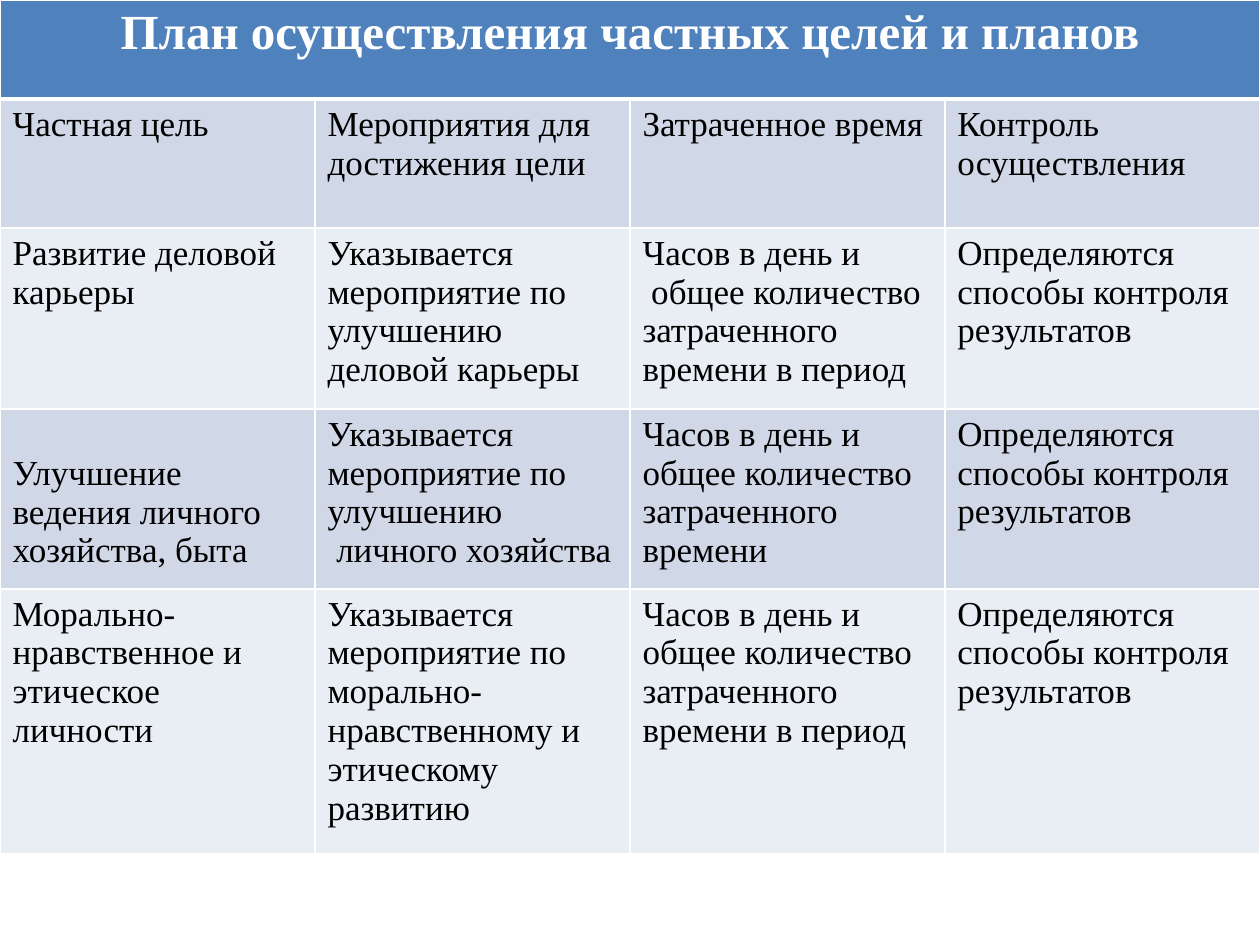
import pptx
import pptx.dml.color
import pptx.enum.text
import pptx.util
import lxml.etree
from pptx.oxml.ns import qn

EMU_PER_PX = 914400 // 126
FONT = "Times New Roman"
WHITE = "FFFFFF"
BLACK = "000000"
HEADER_FILL = "4F81BD"
BAND_FILLS = ["D0D8E8", "E9EDF4"]
COLUMN_WIDTH = 315
ROW_HEIGHTS = [99, 129, 181, 180, 265]
TOP_MARGIN = 6
LINE_HEIGHT = 39
TITLE = "План осуществления частных целей и планов"
CONTROL = "Определяются способы контроля результатов"
ROWS = [
    ["Частная цель", "Мероприятия для достижения цели", "Затраченное время",
     "Контроль\nосуществления"],
    ["Развитие деловой карьеры",
     "Указывается мероприятие по улучшению деловой карьеры",
     "Часов в день и\n общее количество затраченного времени в период", CONTROL],
    ["Улучшение ведения личного хозяйства, быта",
     "Указывается мероприятие по улучшению\n личного хозяйства",
     "Часов в день и\nобщее количество затраченного времени", CONTROL],
    ["Морально-нравственное и этическое личности",
     "Указывается мероприятие по морально-\nнравственному и этическому развитию",
     "Часов в день и\nобщее количество затраченного времени в период", CONTROL],
]


def px(length):
    return pptx.util.Emu(length * EMU_PER_PX)


def color(value):
    return pptx.dml.color.RGBColor.from_string(value)


def set_borders(cell, top, bottom):
    properties = cell._tc.get_or_add_tcPr()
    for side, width in (("L", 1), ("R", 1), ("T", top), ("B", bottom)):
        line = lxml.etree.SubElement(properties, qn(f"a:ln{side}"), w=str(pptx.util.Pt(width)))
        fill = lxml.etree.SubElement(line, qn("a:solidFill"))
        lxml.etree.SubElement(fill, qn("a:srgbClr"), val=WHITE)


def style_cell(cell, fill, top=1, bottom=1):
    set_borders(cell, top, bottom)
    cell.fill.solid()
    cell.fill.fore_color.rgb = color(fill)
    cell.margin_top = px(TOP_MARGIN)


def write_text(cell, text, size, text_color, bold=False, alignment=None):
    cell.text_frame.text = text
    for paragraph in cell.text_frame.paragraphs:
        paragraph.alignment = alignment
        for run in paragraph.runs:
            run.font.name = FONT
            run.font.size = pptx.util.Pt(size)
            run.font.bold = bold
            run.font.color.rgb = color(text_color)


def add_plan_table(slide):
    row_count, column_count = len(ROW_HEIGHTS), len(ROWS[0])
    frame = slide.shapes.add_table(row_count, column_count, 0, 0,
                                   px(COLUMN_WIDTH * column_count), px(sum(ROW_HEIGHTS)))
    table = frame.table
    for column in table.columns:
        column.width = px(COLUMN_WIDTH)
    for row, height in zip(table.rows, ROW_HEIGHTS):
        row.height = px(height)
    return table


def fill_header(table):
    for cell in table.rows[0].cells:
        style_cell(cell, HEADER_FILL, bottom=3)
    header = table.cell(0, 0)
    header.merge(table.cell(0, len(table.columns) - 1))
    write_text(header, TITLE, 28, WHITE, True, pptx.enum.text.PP_ALIGN.CENTER)


def fill_body(table):
    for row_index, texts in enumerate(ROWS):
        for column_index, text in enumerate(texts):
            cell = table.cell(row_index + 1, column_index)
            style_cell(cell, BAND_FILLS[row_index % 2], top=1 if row_index else 3)
            write_text(cell, text, 20, BLACK)
    table.cell(3, 0).margin_top = px(TOP_MARGIN + LINE_HEIGHT)


def main():
    presentation = pptx.Presentation()
    presentation.slide_width = px(1260)
    presentation.slide_height = px(945)
    slide = presentation.slides.add_slide(presentation.slide_layouts[6])
    table = add_plan_table(slide)
    fill_header(table)
    fill_body(table)
    presentation.save("out.pptx")


if __name__ == "__main__":
    main()
